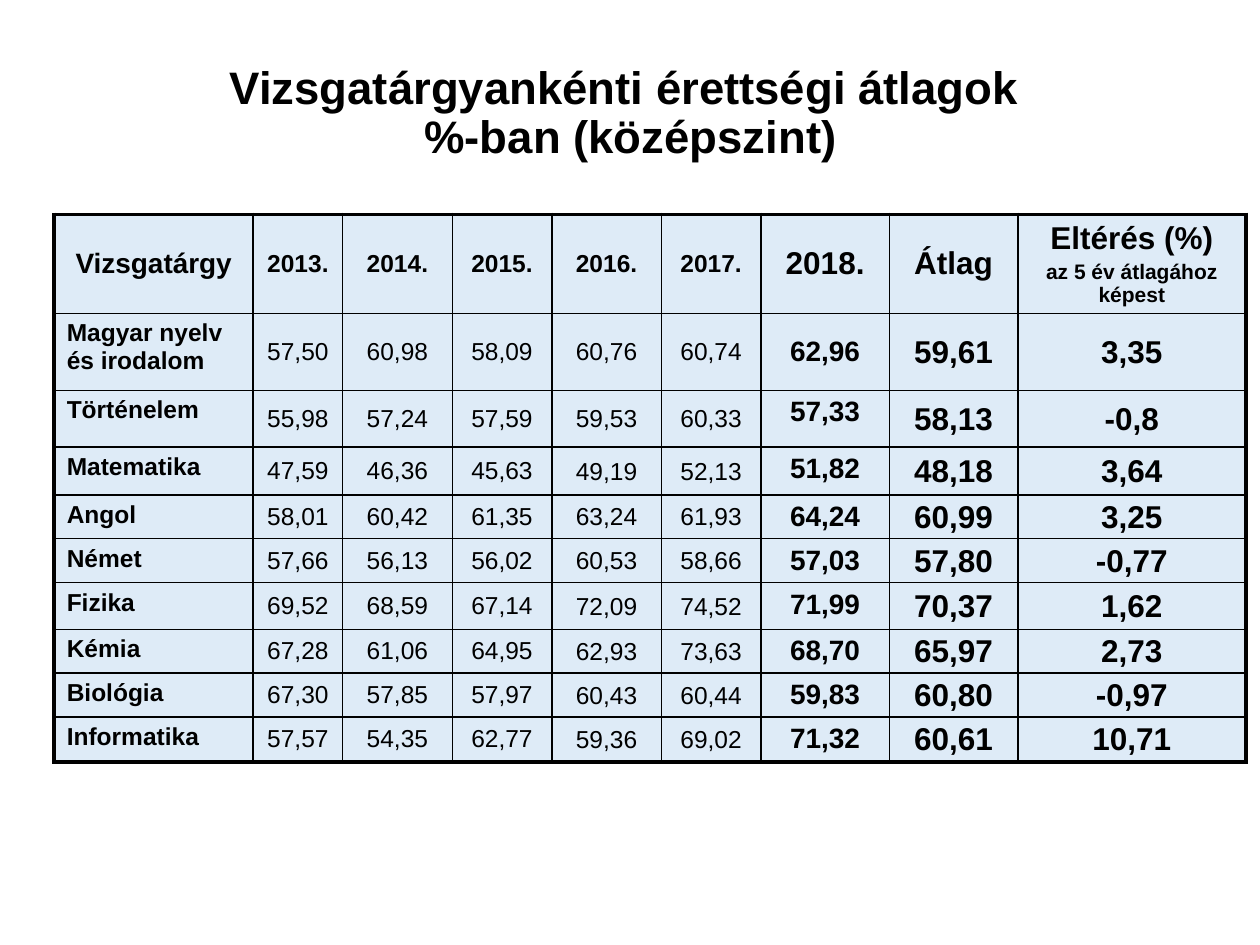
from lxml.etree import SubElement
from pptx import Presentation
from pptx.dml.color import RGBColor
from pptx.enum.text import MSO_ANCHOR, PP_ALIGN
from pptx.oxml.ns import qn
from pptx.util import Inches, Pt

BLACK = RGBColor(0x00, 0x00, 0x00)
PALE_BLUE = RGBColor(0xDE, 0xEB, 0xF7)
FONT = "Arial"
THIN, THICK = 1, 2.25

TITLE = "Vizsgatárgyankénti érettségi átlagok\v %-ban (középszint)"
HEADERS = ["Vizsgatárgy", "2013.", "2014.", "2015.", "2016.", "2017.",
           "2018.", "Átlag", "Eltérés (%)"]
HEADER_SIZES = [16, 14, 14, 14, 14, 14, 18, 18, 18]
HEADER_NOTE = "az 5 év átlagához képest"
RESULTS = [
    ("Magyar nyelv és irodalom", "57,50 60,98 58,09 60,76 60,74 62,96 59,61 3,35"),
    ("Történelem", "55,98 57,24 57,59 59,53 60,33 57,33 58,13 -0,8"),
    ("Matematika", "47,59 46,36 45,63 49,19 52,13 51,82 48,18 3,64"),
    ("Angol", "58,01 60,42 61,35 63,24 61,93 64,24 60,99 3,25"),
    ("Német", "57,66 56,13 56,02 60,53 58,66 57,03 57,80 -0,77"),
    ("Fizika", "69,52 68,59 67,14 72,09 74,52 71,99 70,37 1,62"),
    ("Kémia", "67,28 61,06 64,95 62,93 73,63 68,70 65,97 2,73"),
    ("Biológia", "67,30 57,85 57,97 60,43 60,44 59,83 60,80 -0,97"),
    ("Informatika", "57,57 54,35 62,77 59,36 69,02 71,32 60,61 10,71"),
]
COLUMN_WEIGHTS = [1.58, 0.71, 0.87, 0.79, 0.87, 0.79, 1.02, 1.02, 1.81]
ROW_WEIGHTS = [0.56, 0.61, 0.45, 0.38, 0.29, 0.35, 0.37, 0.33, 0.34, 0.36]
YEAR_2018 = 6
TIGHT_COLUMNS = (4, 5, 7, 8)


def write(p, text, size=14, bold=False, align=PP_ALIGN.CENTER,
          line_spacing=None, space_before=None):
    p.text = text
    p.alignment = align
    p.line_spacing = line_spacing
    p.space_before = space_before
    for r in p.runs:
        r.font.name = FONT
        r.font.size = Pt(size)
        r.font.bold = bold
        r.font.color.rgb = BLACK


def add_title(s, box):
    sp = s.shapes.title
    sp.left, sp.top, sp.width, sp.height = box
    sp.text_frame.vertical_anchor = MSO_ANCHOR.MIDDLE
    write(sp.text_frame.paragraphs[0], TITLE, size=26, bold=True, line_spacing=0.9)


def set_border(cell, side, width):
    line = SubElement(cell._tc.get_or_add_tcPr(), qn(f"a:ln{side}"), w=str(Pt(width)))
    fill = SubElement(line, qn("a:solidFill"))
    SubElement(fill, qn("a:srgbClr"), val=str(BLACK))


def style_cell(cell, row, column):
    outer = {"L": column == 0, "R": column == len(HEADERS) - 1,
             "T": row == 0, "B": row == len(RESULTS)}
    for side, is_outer in outer.items():
        set_border(cell, side, THICK if is_outer else THIN)
    cell.fill.solid()
    cell.fill.fore_color.rgb = PALE_BLUE
    top = row > 0 and (column == 0 or (column == YEAR_2018 and row > 1))
    cell.vertical_anchor = MSO_ANCHOR.TOP if top else MSO_ANCHOR.MIDDLE
    if row > 0 and column in TIGHT_COLUMNS:
        cell.margin_left = cell.margin_right = cell.margin_top = Inches(0.01)
        cell.margin_bottom = 0


def fill_header(table):
    for column, (text, size) in enumerate(zip(HEADERS, HEADER_SIZES)):
        cell = table.cell(0, column)
        write(cell.text_frame.paragraphs[0], text, size=size, bold=True)
    write(cell.text_frame.add_paragraph(), HEADER_NOTE, size=12, bold=True,
          space_before=Pt(2.4))


def fill_results(table):
    sizes = [14] * YEAR_2018 + [16, 18, 18]
    for row, (subject, values) in enumerate(RESULTS, 1):
        for column, text in enumerate([subject, *values.split()]):
            write(table.cell(row, column).text_frame.paragraphs[0], text,
                  size=sizes[column], bold=column == 0 or column >= YEAR_2018,
                  align=PP_ALIGN.CENTER if column else PP_ALIGN.LEFT)


def add_results_table(s, box):
    width, height = box[2:]
    table = s.shapes.add_table(len(ROW_WEIGHTS), len(COLUMN_WEIGHTS), *box).table
    for column, weight in zip(table.columns, COLUMN_WEIGHTS):
        column.width = int(width * weight / sum(COLUMN_WEIGHTS))
    for row, weight in zip(table.rows, ROW_WEIGHTS):
        row.height = int(height * weight / sum(ROW_WEIGHTS))
    for row in range(len(ROW_WEIGHTS)):
        for column in range(len(COLUMN_WEIGHTS)):
            style_cell(table.cell(row, column), row, column)
    fill_header(table)
    fill_results(table)


def main():
    prs = Presentation()
    prs.slide_width, prs.slide_height = Inches(10), Inches(7.5)

    def share(left, top, width, height):
        return (int(prs.slide_width * left / 100), int(prs.slide_height * top / 100),
                int(prs.slide_width * width / 100), int(prs.slide_height * height / 100))

    s = prs.slides.add_slide(prs.slide_layouts[5])
    add_title(s, share(2.7, 5.87, 93.7, 12.53))
    add_results_table(s, share(4.3, 22.67, 94.6, 53.87))
    prs.save("out.pptx")


if __name__ == "__main__":
    main()
